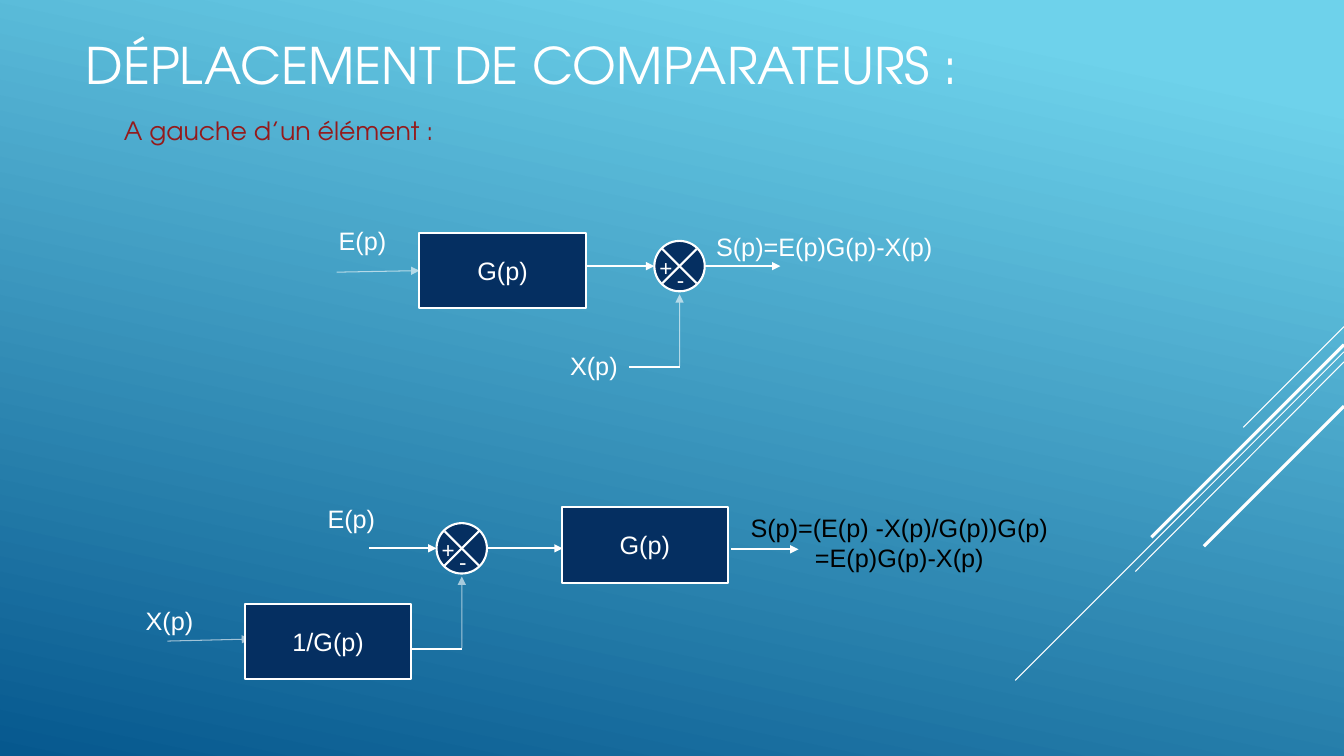
from dataclasses import dataclass

from lxml import etree
from pptx import Presentation
from pptx.dml.color import RGBColor
from pptx.enum.shapes import MSO_CONNECTOR, MSO_SHAPE
from pptx.enum.text import MSO_ANCHOR, MSO_AUTO_SIZE, PP_ALIGN
from pptx.oxml.ns import qn
from pptx.util import Inches, Pt

STRAIGHT = MSO_CONNECTOR.STRAIGHT
RECTANGLE, OVAL = MSO_SHAPE.RECTANGLE, MSO_SHAPE.OVAL
TOP, MIDDLE, BOTTOM = MSO_ANCHOR.TOP, MSO_ANCHOR.MIDDLE, MSO_ANCHOR.BOTTOM
LEFT, CENTER = PP_ALIGN.LEFT, PP_ALIGN.CENTER
FIT_SHAPE = MSO_AUTO_SIZE.SHAPE_TO_FIT_TEXT


@dataclass(frozen=True)
class Theme:
    sky: RGBColor = RGBColor(0x6E, 0xD2, 0xEB)
    deep: RGBColor = RGBColor(0x06, 0x58, 0x8E)
    navy: RGBColor = RGBColor(0x05, 0x2F, 0x61)
    white: RGBColor = RGBColor(0xFF, 0xFF, 0xFF)
    black: RGBColor = RGBColor(0, 0, 0)
    red: RGBColor = RGBColor(0x94, 0x1A, 0x1B)
    heading_font: str = "TeX Gyre Adventor"
    diagram_font: str = "Arial"
    title_size: int = 36
    text_size: int = 18
    sign_size: int = 16
    thin: float = 0.75
    medium: float = 1.5
    thick: float = 2.25


theme = Theme()
presentation = Presentation()
presentation.slide_width = Inches(13.33)
presentation.slide_height = Inches(7.5)
slide = presentation.slides.add_slide(presentation.slide_layouts[6])

background = slide.background.fill
background.gradient()
background.gradient_angle = 258
for stop, color, position in zip(
    background.gradient_stops, (theme.sky, theme.deep), (0.1, 1)
):
    stop.color.rgb = color
    stop.position = position


def add_text(text, left, top, width, height, size=theme.text_size,
             color=theme.white, font=theme.diagram_font, align=CENTER,
             anchor=TOP, wrap=False, space_after=0, block=False):
    box = tuple(Inches(value) for value in (left, top, width, height))
    if block:
        shape = slide.shapes.add_shape(RECTANGLE, *box)
        shape.shadow.inherit = False
        shape.fill.solid()
        shape.fill.fore_color.rgb = theme.navy
        shape.line.color.rgb = theme.white
        shape.line.width = Pt(theme.medium)
    else:
        shape = slide.shapes.add_textbox(*box)
    frame = shape.text_frame
    frame.word_wrap = wrap
    frame.vertical_anchor = anchor
    if not block and not wrap:
        frame.auto_size = FIT_SHAPE
    frame.text = text
    for paragraph in frame.paragraphs:
        paragraph.alignment = align
        paragraph.space_after = Pt(space_after)
        paragraph.font.name = font
        paragraph.font.size = Pt(size)
        paragraph.font.color.rgb = color
    return shape


def add_line(start, end, width=theme.medium, arrow=False, alpha=None):
    points = (Inches(value) for value in (*start, *end))
    connector = slide.shapes.add_connector(STRAIGHT, *points)
    connector.line.color.rgb = theme.white
    connector.line.width = Pt(width)
    properties = connector.element.spPr
    line = properties.find(qn("a:ln"))
    if alpha:
        color = line.find(".//" + qn("a:srgbClr"))
        etree.SubElement(color, qn("a:alpha"), val=str(alpha * 1000))
    if arrow:
        etree.SubElement(line, qn("a:tailEnd"), type="triangle")
    etree.SubElement(properties, qn("a:effectLst"))
    return connector


for start, end, width in (
    ((13.33, 3.24), (12.33, 4.24), theme.thin),
    ((13.33, 3.49), (10.07, 6.75), theme.thin),
    ((13.33, 3.59), (11.26, 5.67), theme.thin),
    ((13.33, 3.42), (11.42, 5.33), theme.thick),
    ((13.33, 4.03), (11.94, 5.42), theme.thick),
):
    add_line(start, end, width)

add_text("A gauche d’un élément :", 1.13, 1.09, 9.33, 0.64, color=theme.red,
         font=theme.heading_font, align=LEFT, wrap=True, space_after=6)
add_text("DÉPLACEMENT DE COMPARATEURS :", 0.75, 0.16, 12.59, 0.83,
         size=theme.title_size, font=theme.heading_font, align=LEFT,
         anchor=BOTTOM, wrap=True)

faint_arrow = {"width": theme.thin, "arrow": True, "alpha": 60}
block_format = {"width": 1.65, "height": 0.75, "anchor": MIDDLE, "block": True}

upper_block = add_text("G(p)", 4.16, 2.31, **block_format)
upper_input = add_line((3.34, 2.7), (4.16, 2.68), **faint_arrow)
upper_input.end_connect(upper_block, 1)

add_text("G(p)", 5.57, 5.03, **block_format)
add_line((1.66, 6.36), (2.48, 6.34), **faint_arrow)
add_text("1/G(p)", 2.43, 5.99, **block_format)
add_line((7.25, 5.45), (7.92, 5.45), arrow=True)

radius, cross = 0.25, 0.17
for x, y in ((6.74, 2.64), (4.58, 5.44)):
    circle = slide.shapes.add_shape(
        OVAL, Inches(x - radius), Inches(y - radius),
        Inches(2 * radius), Inches(2 * radius))
    circle.shadow.inherit = False
    circle.fill.solid()
    circle.fill.fore_color.rgb = theme.navy
    circle.line.color.rgb = theme.white
    circle.line.width = Pt(theme.medium)
    for rise in (cross, -cross):
        add_line((x - cross, y - rise), (x + cross, y + rise))
    add_line((x - 0.92, y), (x - radius, y), arrow=True)
    add_line((x + radius, y), (x + 1, y), arrow=True)
    add_line((x, y + 1), (x - 0.5, y + 1))
    add_line((x, y + 0.99), (x, y + 0.28), **faint_arrow)
    add_text("-", x - 0.13, y - 0.05, 0.28, 0.37, size=theme.sign_size)
    add_text("+", x - 0.3, y - 0.17, 0.33, 0.37, size=theme.sign_size)

for text, left, top, width, height, color in (
    ("E(p)", 3.26, 2.19, 0.67, 0.4, theme.white),
    ("S(p)=E(p)G(p)-X(p)", 6.99, 2.25, 2.37, 0.4, theme.white),
    ("X(p)", 5.55, 3.43, 0.68, 0.4, theme.white),
    ("E(p)", 3.15, 4.94, 0.67, 0.4, theme.white),
    ("S(p)=(E(p) -X(p)/G(p))G(p)\n=E(p)G(p)-X(p)",
     7.33, 5.03, 3.18, 0.71, theme.black),
    ("X(p)", 1.34, 5.96, 0.68, 0.4, theme.white),
):
    add_text(text, left, top, width, height, color=color)

presentation.save("out.pptx")
